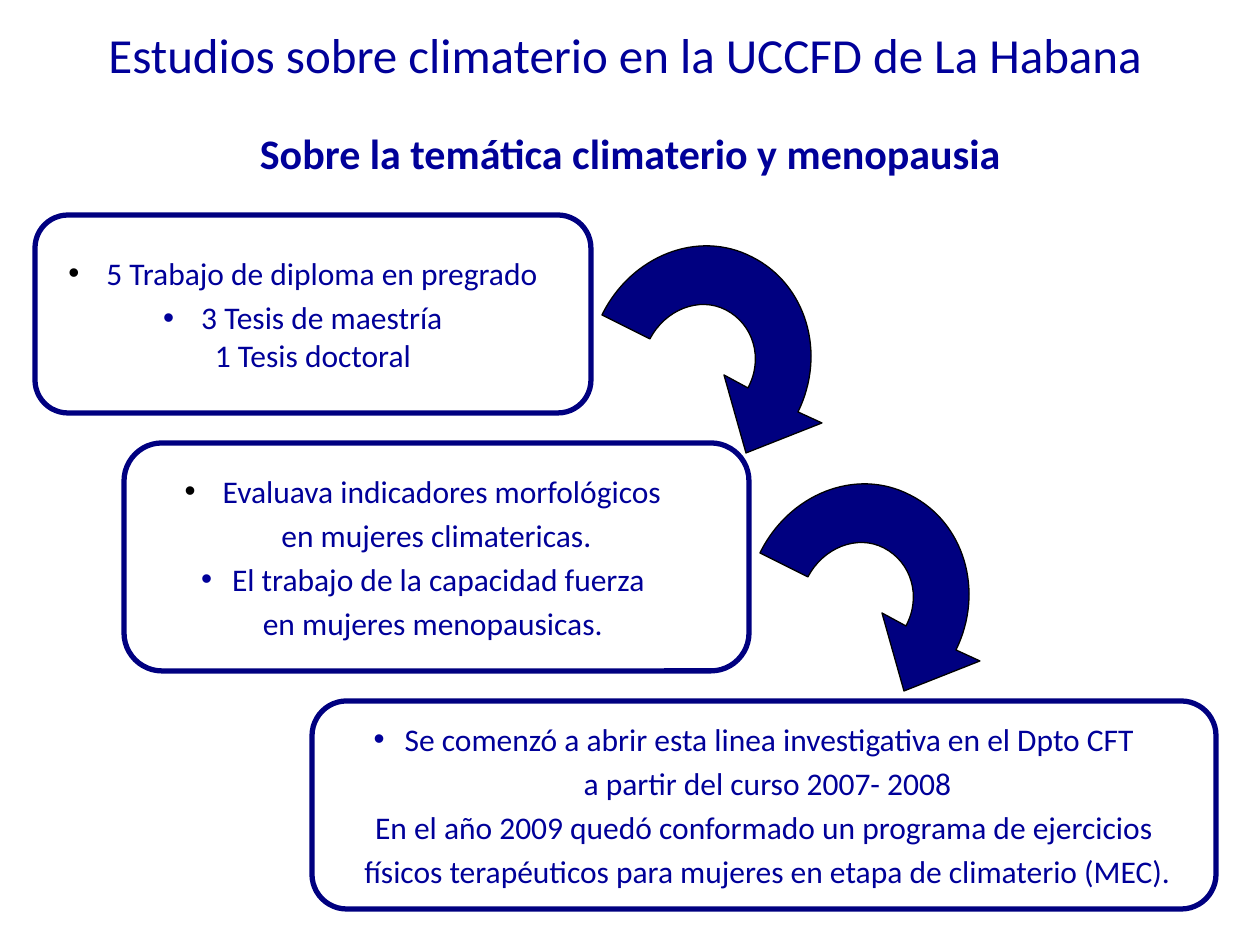
from lxml.etree import SubElement
from pptx import Presentation
from pptx.dml.color import RGBColor
from pptx.enum.shapes import MSO_SHAPE
from pptx.enum.text import MSO_ANCHOR, PP_ALIGN
from pptx.oxml.ns import qn
from pptx.util import Emu, Pt

NAVY = RGBColor(0x00, 0x00, 0x80)
TEXT_BLUE = RGBColor(0x00, 0x00, 0x99)
BLACK = RGBColor(0x00, 0x00, 0x00)
WHITE = RGBColor(0xFF, 0xFF, 0xFF)
FONT = "Calibri"
PX_PER_INCH = 126
BULLET_MARGIN = 10
BULLET_HANG = 31

# Each step: box, then lines of (text, bulleted, space before in points)
STEPS = [
    ((35, 215, 556, 198), [
        ("5 Trabajo de diploma en pregrado", True, 3.6),
        (" 3 Tesis de maestría", True, 3.6),
        ("1 Tesis doctoral", False, 0),
    ]),
    ((124, 443, 625, 228), [
        ("Evaluava indicadores morfológicos ", True, 3.6),
        ("en mujeres climatericas.", False, 3.6),
        ("El trabajo de la capacidad fuerza ", True, 3.6),
        ("en mujeres menopausicas. ", False, 3.6),
    ]),
    ((312, 701, 904, 208), [
        ("Se comenzó a abrir esta linea investigativa en el Dpto CFT", True, 3.6),
        (" a partir del curso 2007- 2008", False, 3.6),
        ("En el año 2009 quedó conformado un programa de ejercicios", False, 3.6),
        (" físicos terapéuticos para mujeres en etapa de climaterio (MEC).", False, 3.6),
    ]),
]
BLACK_BULLET_STEPS = (0, 1)
ARROW_ORIGINS = [(602, 246), (760, 484)]

# Arrow outline: a single point is a line, three points are a Bézier curve
ARROW_START = (146, 142)
ARROW_SEGMENTS = [
    [(162, 112), (151, 78), (124, 64)],
    [(97, 50), (63, 64), (48, 93)],
    [(0, 69)],
    [(29, 10), (96, -17), (150, 11)],
    [(204, 38), (225, 107), (196, 166)],
    [(220, 177)],
    [(144, 207)],
    [(122, 129)],
]


def px(length):
    return Emu(round(length * 914400 / PX_PER_INCH))


def add_run(paragraph, text, size=18, color=TEXT_BLUE, bold=False):
    run = paragraph.add_run()
    run.text = text
    run.font.name = FONT
    run.font.size = Pt(size)
    run.font.bold = bold
    run.font.color.rgb = color


def write_line(paragraph, text, space_before=0, bullet=False, black_bullet=False, **run_format):
    paragraph.alignment = PP_ALIGN.CENTER
    paragraph.space_before = Pt(space_before)
    if bullet:
        properties = paragraph._p.get_or_add_pPr()
        properties.set("marL", str(px(BULLET_MARGIN)))
        properties.set("indent", str(px(-BULLET_HANG)))
        SubElement(properties, qn("a:buFont")).set("typeface", "Arial")
        SubElement(properties, qn("a:buChar")).set("char", "•")
    if black_bullet:
        # The bullet takes the colour of the first run
        add_run(paragraph, " ", color=BLACK)
    add_run(paragraph, text, **run_format)


def add_heading(slide, left, top, width, height):
    shape = slide.shapes.add_textbox(px(left), px(top), px(width), px(height))
    frame = shape.text_frame
    frame.word_wrap = True
    frame.vertical_anchor = MSO_ANCHOR.MIDDLE
    frame.margin_top = px(14)
    write_line(frame.paragraphs[0], "Estudios sobre climaterio en la UCCFD de La Habana ", size=28)
    write_line(frame.add_paragraph(), "Sobre la temática climaterio y menopausia",
               space_before=25, size=24, bold=True)


def add_step(slide, left, top, width, height, lines, black_bullet):
    shape = slide.shapes.add_shape(MSO_SHAPE.ROUNDED_RECTANGLE,
                                   px(left), px(top), px(width), px(height))
    shape.shadow.inherit = False
    shape.fill.solid()
    shape.fill.fore_color.rgb = WHITE
    shape.line.color.rgb = NAVY
    shape.line.width = Pt(3)
    frame = shape.text_frame
    frame.word_wrap = False
    frame.vertical_anchor = MSO_ANCHOR.MIDDLE
    for index, (text, bullet, space_before) in enumerate(lines):
        paragraph = frame.add_paragraph() if index else frame.paragraphs[0]
        write_line(paragraph, text, space_before, bullet, black_bullet and index == 0)


def bend_segments(shape, segments):
    """Turn each run of three straight segments into one Bézier curve."""
    straight = iter(list(shape._element.iter(qn("a:lnTo"))))
    for segment in segments:
        first, *others = [next(straight) for _ in segment]
        if others:
            first.tag = qn("a:cubicBezTo")
            for other in others:
                first.append(other[0])
                other.getparent().remove(other)


def add_curved_arrow(slide, left, top):
    points = [ARROW_START] + [point for segment in ARROW_SEGMENTS for point in segment]
    outline = [(px(left + x), px(top + y)) for x, y in points]
    builder = slide.shapes.build_freeform(*outline[0])
    builder.add_line_segments(outline[1:], close=False)
    builder.add_line_segments([], close=True)
    arrow = builder.convert_to_shape()
    bend_segments(arrow, ARROW_SEGMENTS)
    arrow.shadow.inherit = False
    arrow.fill.solid()
    arrow.fill.fore_color.rgb = NAVY
    arrow.line.color.rgb = BLACK
    arrow.line.width = Pt(0.75)


def main():
    presentation = Presentation()
    presentation.slide_width = px(1260)
    presentation.slide_height = px(945)
    slide = presentation.slides.add_slide(presentation.slide_layouts[6])

    # Heading
    add_heading(slide, 25, 0, 1211, 195)
    # Descending steps
    for index, (box, lines) in enumerate(STEPS):
        add_step(slide, *box, lines, index in BLACK_BULLET_STEPS)
    # Arrows between steps
    for origin in ARROW_ORIGINS:
        add_curved_arrow(slide, *origin)

    presentation.save("out.pptx")


if __name__ == "__main__":
    main()
